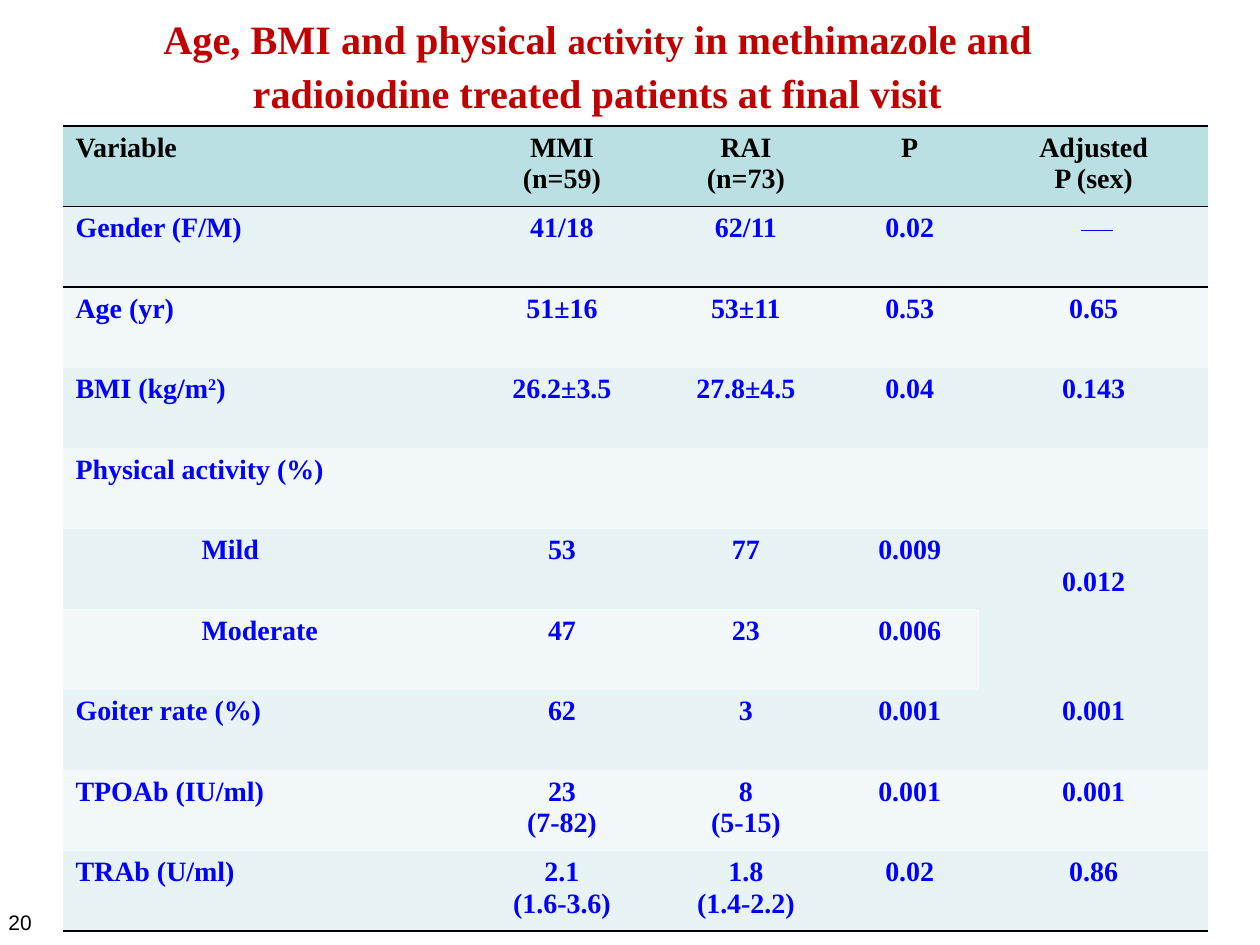
from pptx import Presentation
from pptx.dml.color import RGBColor
from pptx.enum.text import MSO_ANCHOR, MSO_AUTO_SIZE, PP_ALIGN
from pptx.enum.shapes import MSO_CONNECTOR
from pptx.oxml import parse_xml
from pptx.oxml.ns import nsdecls
from pptx.util import Inches, Pt

RED = RGBColor(0xC0, 0x00, 0x00)
BLUE = RGBColor(0x00, 0x00, 0xFF)
BLACK = RGBColor(0x00, 0x00, 0x00)
HEADER_FILL = RGBColor(0xBB, 0xE0, 0xE3)
BANDS = RGBColor(0xE7, 0xF3, 0xF4), RGBColor(0xF3, 0xF9, 0xFA)
SERIF = "Times New Roman"
NO_STYLE = "{2D5ABB26-0587-4C30-8999-92F81FD0307C}"

TITLE = [
    ("Age, BMI and physical ", 23),
    ("activity", 21),
    (" in methimazole and radioiodine treated patients at final visit", 23),
]
ROWS = [
    ("Variable", "MMI\n(n=59)", "RAI\n(n=73)", "P", "Adjusted\nP (sex)"),
    ("Gender (F/M)", "41/18", "62/11", "0.02", ""),
    ("Age (yr)", "51±16", "53±11", "0.53", "0.65"),
    ("BMI (kg/m^2^)", "26.2±3.5", "27.8±4.5", "0.04", "0.143"),
    ("Physical activity (%)", "", "", "", ""),
    ("Mild", "53", "77", "0.009", "0.012"),
    ("Moderate", "47", "23", "0.006", ""),
    ("Goiter rate (%)", "62", "3", "0.001", "0.001"),
    ("TPOAb (IU/ml)", "23\n(7-82)", "8\n(5-15)", "0.001", "0.001"),
    ("TRAb (U/ml)", "2.1\n(1.6-3.6)", "1.8\n(1.4-2.2)", "0.02", "0.86"),
]
COL_WIDTHS = [3.25, 1.42, 1.5, 1.1, 1.82]
INDENTED = ("Mild", "Moderate")
MILD, MODERATE = 5, 6
ADJUSTED = 4


def set_font(p, size, color, name=SERIF, bold=True):
    p.font.size, p.font.name, p.font.bold = Pt(size), name, bold
    p.font.color.rgb = color


def add_border(cell, *sides):
    """Draw 1 pt black lines on the given sides, "T" before "B"."""
    tcPr = cell._tc.get_or_add_tcPr()
    for i, side in enumerate(sides):
        tcPr.insert(i, parse_xml(
            f'<a:ln{side} {nsdecls("a")} w="12700"><a:solidFill>'
            f'<a:srgbClr val="{BLACK}"/></a:solidFill></a:ln{side}>'))


def write_cell(cell, text, color, is_label):
    """Fill in a cell; text between ^ marks is superscript."""
    tf = cell.text_frame
    for i, line in enumerate(text.split("\n")):
        p = tf.paragraphs[0] if i == 0 else tf.add_paragraph()
        p.alignment = PP_ALIGN.LEFT if is_label else PP_ALIGN.CENTER
        if text in INDENTED:
            p._p.get_or_add_pPr().set("marL", str(Inches(1)))
        for j, part in enumerate(line.split("^")):
            r = p.add_run()
            r.text = part
            if j % 2:
                r._r.get_or_add_rPr().set("baseline", "30000")
        set_font(p, 16, color)


def add_title(slide):
    sp = slide.shapes.title
    sp.left, sp.top, sp.width, sp.height = map(Inches, (0.58, 0, 8.33, 1))
    tf = sp.text_frame
    tf.auto_size = MSO_AUTO_SIZE.NONE
    tf.vertical_anchor = MSO_ANCHOR.MIDDLE
    p = tf.paragraphs[0]
    p.alignment = PP_ALIGN.CENTER
    p.line_spacing = 1.1
    set_font(p, 23, RED)
    for text, size in TITLE:
        r = p.add_run()
        r.text = text
        r.font.size = Pt(size)


def add_results(slide):
    frame = slide.shapes.add_table(len(ROWS), len(COL_WIDTHS), Inches(0.5),
                                   Inches(1), Inches(sum(COL_WIDTHS)), Inches(6.39))
    table = frame.table
    table.first_row = table.horz_banding = False
    table._tbl.tblPr.find("{*}tableStyleId").text = NO_STYLE
    for column, width in zip(table.columns, COL_WIDTHS):
        column.width = Inches(width)

    last = len(ROWS) - 1
    for i, row in enumerate(ROWS):
        for j, text in enumerate(row):
            cell = table.cell(i, j)
            write_cell(cell, text, BLUE if i else BLACK, j == 0)
            cell.fill.solid()
            cell.fill.fore_color.rgb = BANDS[(i - 1) % 2] if i else HEADER_FILL
            if i == 0:
                add_border(cell, "T", "B")
            elif i == 1:
                add_border(cell, "T")
            elif i == last:
                add_border(cell, "B")

    shared = table.cell(MILD, ADJUSTED)
    shared.merge(table.cell(MODERATE, ADJUSTED))
    shared.margin_top = Inches(0.3)


def add_page_number(slide):
    box = slide.shapes.add_textbox(*map(Inches, (-1.98, 7.17, 2.33, 0.52)))
    tf = box.text_frame
    tf.word_wrap = True
    p = tf.paragraphs[0]
    p.text = "20"
    p.alignment = PP_ALIGN.RIGHT
    set_font(p, 12, BLACK, "Arial", False)


def add_dash(slide):
    line = slide.shapes.add_connector(
        MSO_CONNECTOR.STRAIGHT, *map(Inches, (8.58, 1.83, 8.83, 1.83)))
    line.line.color.rgb = BLUE
    line.line.width = Pt(1)
    line._element.spPr.append(parse_xml(f'<a:effectLst {nsdecls("a")}/>'))


def main():
    prs = Presentation()
    prs.slide_width, prs.slide_height = Inches(10), Inches(7.5)
    slide = prs.slides.add_slide(prs.slide_layouts[5])
    add_title(slide)
    add_results(slide)
    add_page_number(slide)
    add_dash(slide)
    prs.save("out.pptx")


if __name__ == "__main__":
    main()
